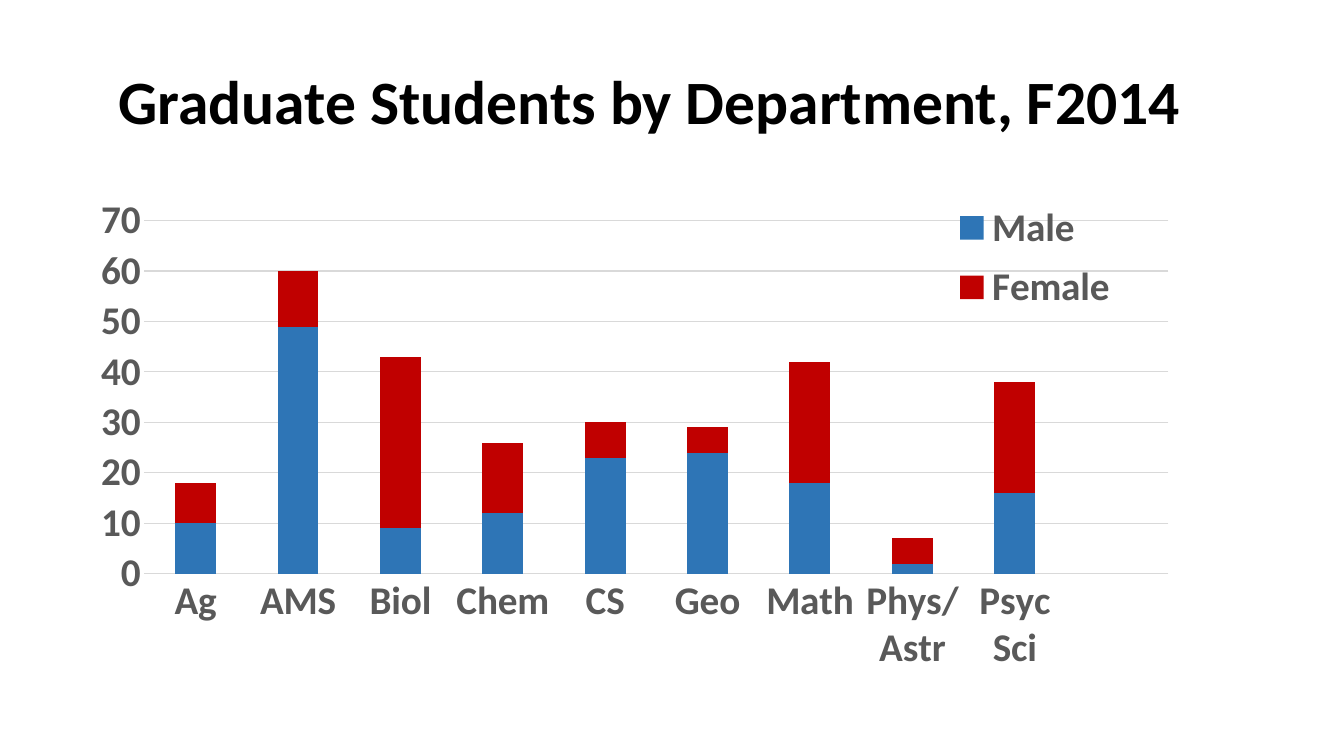
"""Build a slide with a stacked column chart of graduate students by department."""
import pptx
import pptx.chart.data
import pptx.dml.color
import pptx.enum.chart
import pptx.enum.text
import pptx.oxml
import pptx.oxml.ns
import pptx.util
from pptx.util import Inches


def color(hex_string):
    return pptx.dml.color.RGBColor.from_string(hex_string)


def place(element, index, position):
    for layout in element.xpath("c:layout"):
        element.remove(layout)
    target = '<c:layoutTarget val="inner"/>' if element.tag.endswith("plotArea") else ""
    modes = '<c:xMode val="edge"/><c:yMode val="edge"/>'
    values = "".join(f'<c:{name} val="{value}"/>' for name, value in position.items())
    namespace = pptx.oxml.ns.nsdecls("c")
    element.insert(index, pptx.oxml.parse_xml(
        f"<c:layout {namespace}><c:manualLayout>{target}{modes}{values}</c:manualLayout></c:layout>"))


departments = ["Ag", "AMS", "Biol", "Chem", "CS", "Geo", "Math", "Phys/Astr", "Psyc Sci", ""]
students = {
    "Male": ("2E75B6", [10, 49, 9, 12, 23, 24, 18, 2, 16, None]),
    "Female": ("C00000", [8, 11, 34, 14, 7, 5, 24, 5, 22, None]),
}
title_format = {"name": "Calibri", "size": pptx.util.Pt(44), "bold": True}
label_format = {"name": "Calibri", "size": pptx.util.Pt(28), "bold": True}

presentation = pptx.Presentation()
presentation.slide_width = Inches(13.33)
presentation.slide_height = Inches(7.5)
slide = presentation.slides.add_slide(presentation.slide_layouts[6])

title = slide.shapes.add_textbox(Inches(0.7), Inches(0.31), Inches(11.5), Inches(1.45))
title.text_frame.word_wrap = True
title.text_frame.vertical_anchor = pptx.enum.text.MSO_ANCHOR.MIDDLE
paragraph = title.text_frame.paragraphs[0]
paragraph.text = "Graduate Students by Department, F2014"
paragraph.alignment = pptx.enum.text.PP_ALIGN.CENTER
paragraph.line_spacing = 0.9

chart_data = pptx.chart.data.CategoryChartData()
chart_data.categories = departments
for name, (fill, values) in students.items():
    chart_data.add_series(name, values)
chart = slide.shapes.add_chart(
    pptx.enum.chart.XL_CHART_TYPE.COLUMN_STACKED,
    Inches(0.77), Inches(1.85), Inches(11.04), Inches(5.65), chart_data).chart
chart.has_title = False
chart.font.name = "Calibri"
chart.font.size = pptx.util.Pt(10)

plot = chart.plots[0]
plot.gap_width = 150
plot.overlap = 100
plot.vary_by_categories = False
for series, (fill, values) in zip(plot.series, students.values()):
    series.format.fill.solid()
    series.format.fill.fore_color.rgb = color(fill)

category_axis, value_axis = chart.category_axis, chart.value_axis
for axis in (category_axis, value_axis):
    axis.major_tick_mark = pptx.enum.chart.XL_TICK_MARK.NONE
    axis.minor_tick_mark = pptx.enum.chart.XL_TICK_MARK.NONE
value_axis.minimum_scale = 0
value_axis.maximum_scale = 70
value_axis.major_unit = 10
value_axis.has_major_gridlines = True
value_axis.format.line.fill.background()
for line in (category_axis.format.line, value_axis.major_gridlines.format.line):
    line.color.rgb = color("D9D9D9")
    line.width = pptx.util.Pt(0.75)

chart.has_legend = True
legend = chart.legend
legend.position = pptx.enum.chart.XL_LEGEND_POSITION.BOTTOM
legend.include_in_layout = False

fonts = [(paragraph.font, title_format, "000000")]
for labelled in (category_axis.tick_labels, value_axis.tick_labels, legend):
    fonts.append((labelled.font, label_format, "595959"))
for font, font_format, font_color in fonts:
    for attribute, value in font_format.items():
        setattr(font, attribute, value)
    font.color.rgb = color(font_color)

plot_area = chart.element.xpath("c:chart/c:plotArea")[0]
legend_element = chart.element.xpath("c:chart/c:legend")[0]
place(plot_area, 0, {"x": 0.06, "y": 0.06, "w": 0.92, "h": 0.62})
place(legend_element, 1, {"x": 0.78, "y": 0.01, "w": 0.16, "h": 0.23})

presentation.save("out.pptx")
